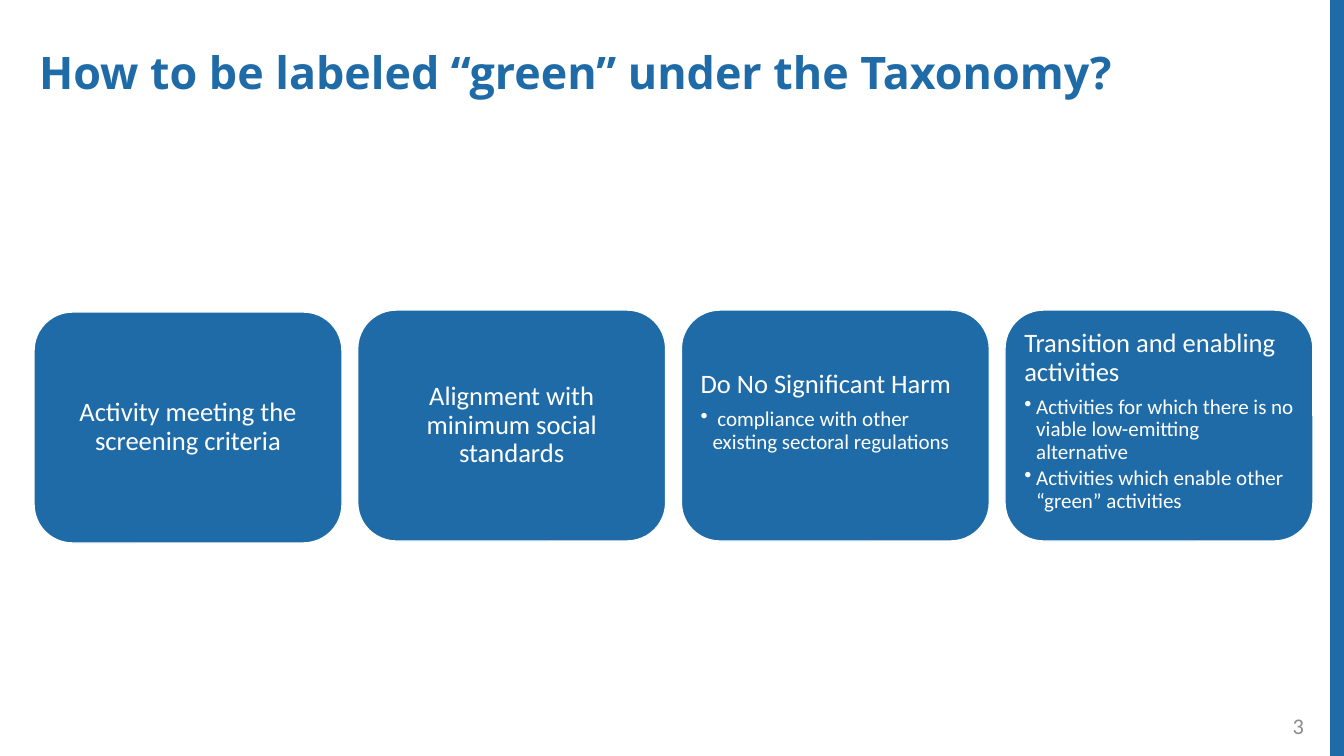
from lxml import etree
from pptx import Presentation
from pptx.dml.color import RGBColor
from pptx.enum.shapes import MSO_CONNECTOR, MSO_SHAPE
from pptx.enum.text import MSO_ANCHOR, MSO_AUTO_SIZE, PP_ALIGN
from pptx.oxml.ns import qn
from pptx.util import Pt

LEFT, CENTER, RIGHT = PP_ALIGN.LEFT, PP_ALIGN.CENTER, PP_ALIGN.RIGHT
TOP, MIDDLE = MSO_ANCHOR.TOP, MSO_ANCHOR.MIDDLE
BLUE, WHITE, GREY = "1F6BA7", "FFFFFF", "8C8C8C"

# Content
TITLE = "How to be labeled “green” under the Taxonomy?"
PAGE_NUMBER = "3"
CARDS = [
    {"top": 312, "heading": "Activity meeting the screening criteria", "bullets": []},
    {"top": 310, "heading": "Alignment with minimum social standards", "bullets": []},
    {"top": 310, "heading": "Do No Significant Harm", "inset_top": 49,
     "bullets": [" compliance with other existing sectoral regulations"]},
    {"top": 310, "heading": "Transition and enabling activities",
     "bullets": ["Activities for which there is no viable low-emitting alternative",
                 "Activities which enable other “green” activities"]},
]

# Layout and text formats
PAGE_WIDTH, PAGE_HEIGHT = 1344, 756
FIRST_LEFT, LAST_LEFT = 34, 1005
CARD_WIDTH, CARD_HEIGHT, INSET = 308, 231, 8
TITLE_FONT = {"name": "Open Sans", "size": Pt(32), "bold": True}
NUMBER_FONT = {"name": "Calibri", "size": Pt(16)}
HEADING_FONT = {"name": "Calibri", "size": Pt(19)}
BULLET_FONT = {"name": "Calibri", "size": Pt(15)}


def px(length):
    return round(length * 914400 / 100.8)


def rgb(value):
    return RGBColor.from_string(value)


def place(shape, left, top, width, height):
    shape.left, shape.top, shape.width, shape.height = map(px, (left, top, width, height))


def set_frame(frame, anchor, **margins):
    frame.word_wrap = True
    frame.auto_size = MSO_AUTO_SIZE.NONE
    frame.vertical_anchor = anchor
    for side, length in margins.items():
        setattr(frame, "margin_" + side, px(length))


def write(para, text, font, color, align, after=0):
    para.alignment = align
    para.line_spacing = 0.9
    para.space_before, para.space_after = Pt(0), Pt(after)
    span = para.add_run()
    span.text = text
    for name, value in font.items():
        setattr(span.font, name, value)
    span.font.color.rgb = rgb(color)


def add_bullet(para):
    props = para._p.get_or_add_pPr()
    props.set("marL", str(px(12)))
    props.set("indent", str(-px(12)))
    etree.SubElement(props, qn("a:buChar")).set("char", "•")


deck = Presentation()
deck.slide_width, deck.slide_height = px(PAGE_WIDTH), px(PAGE_HEIGHT)
page = deck.slides.add_slide(deck.slide_layouts[5])

# Blue edge
edge = page.shapes.add_connector(MSO_CONNECTOR.STRAIGHT, px(1338), 0, px(1338), px(PAGE_HEIGHT))
edge.line.color.rgb = rgb(BLUE)
edge.line.width = Pt(12)
etree.SubElement(edge._element.spPr, qn("a:effectLst"))

# Title
title = page.shapes.title
place(title, 29, 46, 1206, 58)
set_frame(title.text_frame, TOP, left=10, top=5, right=10, bottom=5)
write(title.text_frame.paragraphs[0], TITLE, TITLE_FONT, BLUE, LEFT)

# Page number
number = page.shapes.add_textbox(px(1012), px(707), px(302), px(40))
set_frame(number.text_frame, MIDDLE)
write(number.text_frame.paragraphs[0], PAGE_NUMBER, NUMBER_FONT, GREY, RIGHT)

# Row of cards
step = (LAST_LEFT - FIRST_LEFT) / (len(CARDS) - 1)
for index, card in enumerate(CARDS):
    box = page.shapes.add_shape(MSO_SHAPE.ROUNDED_RECTANGLE, px(FIRST_LEFT + index * step),
                                px(card["top"]), px(CARD_WIDTH), px(CARD_HEIGHT))
    box.shadow.inherit = False
    box.fill.solid()
    box.fill.fore_color.rgb = rgb(BLUE)
    box.line.color.rgb = rgb(WHITE)
    box.line.width = Pt(1)

    bullets = card["bullets"]
    frame = box.text_frame
    set_frame(frame, TOP if bullets else MIDDLE, left=INSET, right=INSET,
              top=card.get("inset_top", INSET), bottom=INSET)
    write(frame.paragraphs[0], card["heading"], HEADING_FONT, WHITE,
          LEFT if bullets else CENTER, after=6.65)
    for text in bullets:
        para = frame.add_paragraph()
        add_bullet(para)
        write(para, text, BULLET_FONT, WHITE, LEFT, after=2.25)

deck.save("out.pptx")
